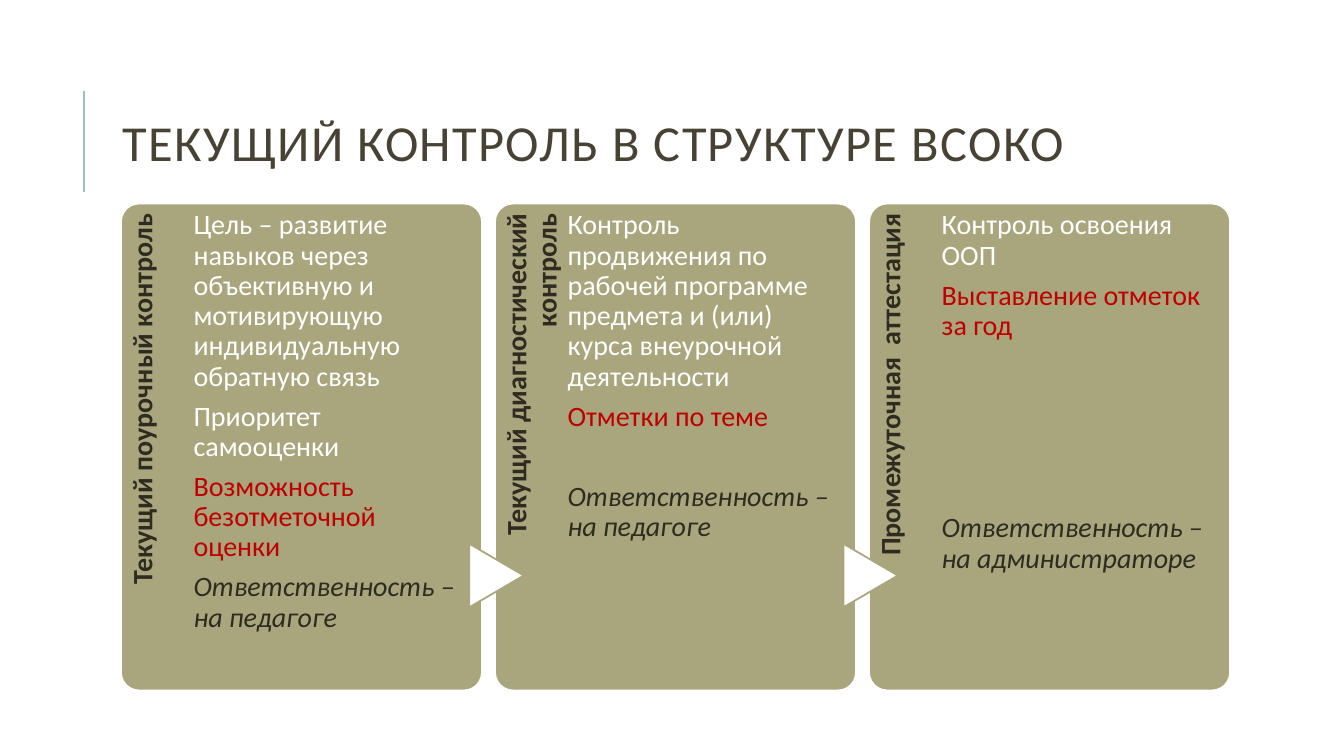
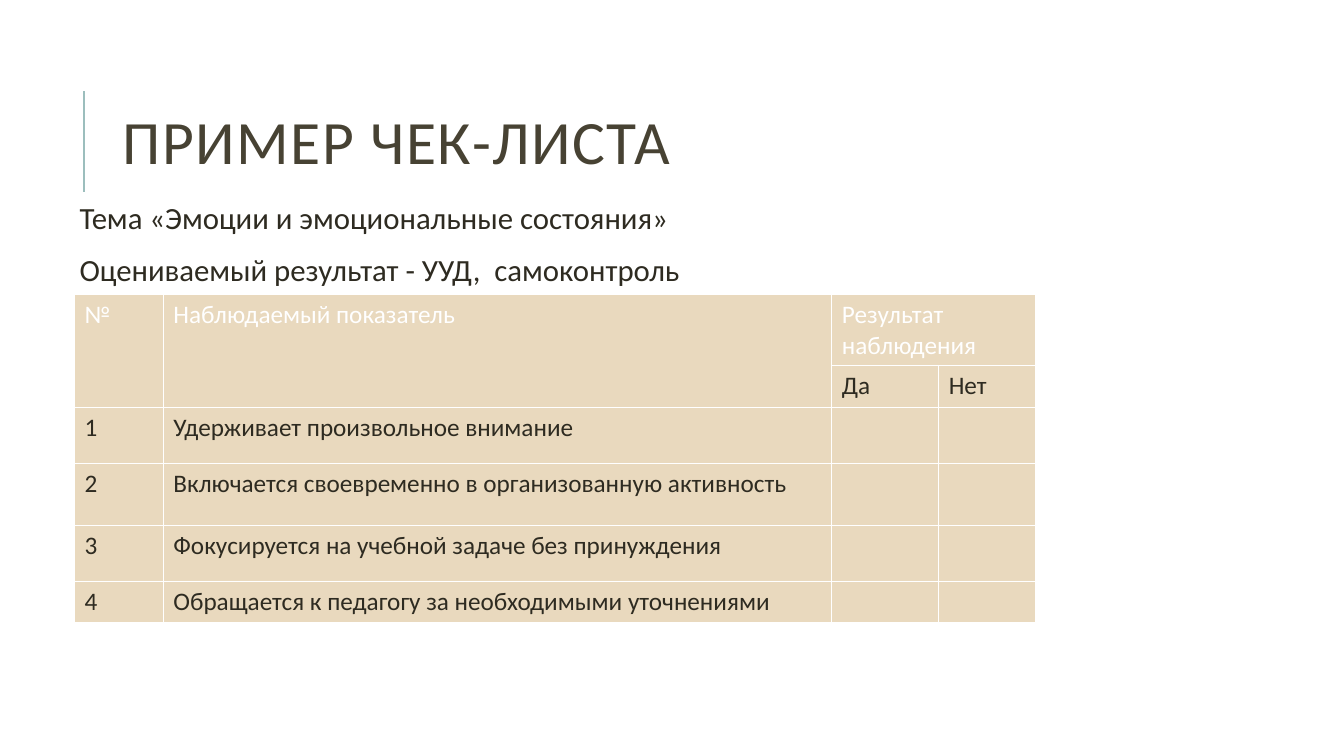
"""Build two slides on classroom assessment: a three-stage process and a checklist."""
from lxml import etree
from pptx import Presentation
from pptx.dml.color import RGBColor
from pptx.enum.shapes import MSO_CONNECTOR, MSO_SHAPE
from pptx.enum.text import MSO_ANCHOR, PP_ALIGN
from pptx.oxml.ns import qn
from pptx.util import Pt

PX = 9144
STRAIGHT = MSO_CONNECTOR.STRAIGHT
ROUNDED, TRIANGLE = MSO_SHAPE.ROUNDED_RECTANGLE, MSO_SHAPE.FLOWCHART_EXTRACT
LEFT, RIGHT = PP_ALIGN.LEFT, PP_ALIGN.RIGHT
TOP, MIDDLE = MSO_ANCHOR.TOP, MSO_ANCHOR.MIDDLE

THEME = {
    "font": "Calibri",
    "colors": {"title": "474233", "ink": "2E2B21", "white": "FFFFFF", "accent": "C00000",
               "card": "A9A57C", "rule": "9CBEBD", "cell": "E9D9BE"},
    "styles": {
        "process title": {"size": 36, "color": "title"},
        "checklist title": {"size": 44, "color": "title"},
        "stage": {"size": 20, "color": "ink", "bold": True},
        "goal": {"size": 20, "color": "white"},
        "mark": {"size": 20, "color": "accent"},
        "owner": {"size": 20, "color": "ink", "italic": True},
        "topic": {"size": 22, "color": "ink"},
        "head": {"size": 18, "color": "white"},
        "cell": {"size": 18, "color": "ink"},
    },
}
TITLE_FORMAT = {"line_spacing": 0.8}
CARD_FORMAT = {"line_spacing": 0.9, "space_after": Pt(7)}
TOPIC_FORMAT = {"line_spacing": 0.9, "space_before": Pt(12), "space_after": Pt(2)}
SKIPPED_LINE = 29

PROCESS_TITLE = "ТЕКУЩИЙ КОНТРОЛЬ В СТРУКТУРЕ ВСОКО"
STAGES = [
    {"name": "Текущий поурочный контроль", "skipped": 0, "points": [
        ("Цель – развитие навыков через объективную и мотивирующую "
         "индивидуальную обратную связь", "goal"),
        ("Приоритет самооценки", "goal"),
        ("Возможность безотметочной оценки", "mark"),
        ("Ответственность – на педагоге", "owner")]},
    {"name": "Текущий диагностический контроль", "skipped": 1, "points": [
        ("Контроль продвижения по рабочей программе предмета и (или) "
         "курса внеурочной деятельности", "goal"),
        ("Отметки по теме", "mark"),
        ("Ответственность – на педагоге", "owner")]},
    {"name": "Промежуточная  аттестация", "skipped": 4, "points": [
        ("Контроль освоения ООП", "goal"),
        ("Выставление отметок за год", "mark"),
        ("Ответственность – на администраторе", "owner")]},
]
CARD_LEFT, CARD_TOP, CARD_W, CARD_H, CARD_PITCH = 120, 202, 358, 483, 371
STAGE_W, STAGE_H = 396, 72
POINTS_W = 267
ARROW_W, ARROW_H, ARROW_TOP, ARROW_OVERLAP = 63, 54, 544, 30

CHECKLIST_TITLE = "ПРИМЕР ЧЕК-ЛИСТА"
TOPICS = [("Тема «Эмоции и эмоциональные состояния»", "topic"),
          ("Оцениваемый результат - УУД,  самоконтроль", "topic")]
HEADER = ["№", "Наблюдаемый показатель", "Результат наблюдения", ""]
ANSWERS = ["", "", "Да", "Нет"]
INDICATORS = ["Удерживает произвольное внимание",
              "Включается своевременно в организованную активность",
              "Фокусируется на учебной задаче без принуждения",
              "Обращается к педагогу за необходимыми уточнениями"]
MERGES = [((0, 0), (1, 0)), ((0, 1), (1, 1)), ((0, 2), (0, 3))]
COLUMN_WIDTHS = [88, 663, 106, 96]
ROW_HEIGHTS = [71, 41, 56, 61, 56, 41]


def px(*values):
    return [v * PX for v in values]


def color(name):
    return RGBColor.from_string(THEME["colors"][name])


def add_run(p, text, style):
    r = p.add_run()
    r.text = text
    look = THEME["styles"][style]
    values = {"name": THEME["font"], "size": Pt(look["size"]),
              "bold": look.get("bold", False), "italic": look.get("italic", False)}
    for key, value in values.items():
        setattr(r.font, key, value)
    r.font.color.rgb = color(look["color"])
    return r


def add_text(s, box, lines, paragraph_format, insets=(10, 5, 10, 5), align=LEFT, anchor=TOP):
    sp = s.shapes.add_textbox(*px(*box))
    tf = sp.text_frame
    left, top, right, bottom = px(*insets)
    frame = {"word_wrap": True, "vertical_anchor": anchor, "margin_left": left,
             "margin_top": top, "margin_right": right, "margin_bottom": bottom}
    for key, value in frame.items():
        setattr(tf, key, value)
    for i, (text, style) in enumerate(lines):
        p = tf.add_paragraph() if i else tf.paragraphs[0]
        for key, value in {"alignment": align, **paragraph_format}.items():
            setattr(p, key, value)
        add_run(p, text, style)
    return sp


def add_shape(s, kind, box, fill, line):
    sp = s.shapes.add_shape(kind, *px(*box))
    sp.shadow.inherit = False
    sp.fill.solid()
    sp.fill.fore_color.rgb = color(fill)
    sp.line.color.rgb = color(line)
    sp.line.width = Pt(1.25)
    return sp


def add_titled_slide(prs, title, style):
    s = prs.slides.add_slide(prs.slide_layouts[6])
    rule = s.shapes.add_connector(STRAIGHT, *px(83, 190, 83, 90))
    rule.line.color.rgb = color("rule")
    rule.line.width = Pt(1.5)
    etree.SubElement(rule._element.spPr, qn("a:effectLst"))
    sp = add_text(s, (112, 64, 1063, 164), [(title, style)], TITLE_FORMAT, anchor=MIDDLE)
    sp.text_frame.paragraphs[0].runs[0]._r.get_or_add_rPr().set("spc", "100")
    return s


def add_stage(s, index, stage):
    left = CARD_LEFT + index * CARD_PITCH
    card = add_shape(s, ROUNDED, (left, CARD_TOP, CARD_W, CARD_H), "card", "white")
    card.adjustments[0] = 0.05
    shift = (STAGE_W - STAGE_H) // 2
    name = add_text(s, (left - shift, CARD_TOP + shift, STAGE_W, STAGE_H),
                    [(stage["name"], "stage")], CARD_FORMAT, (0, 7, 10, 0), RIGHT)
    name.rotation = 270
    if index:
        arrow = add_shape(s, TRIANGLE, (left - ARROW_OVERLAP, ARROW_TOP, ARROW_W, ARROW_H),
                          "white", "card")
        arrow.rotation = 90
    points = add_text(s, (left + STAGE_H, CARD_TOP, POINTS_W, CARD_H),
                      stage["points"], CARD_FORMAT, (0, 7, 0, 0))
    before_owner = points.text_frame.paragraphs[-2]
    before_owner.space_after = Pt(7 + stage["skipped"] * SKIPPED_LINE)


def format_cell(cell, text, style):
    tc_pr = cell._tc.get_or_add_tcPr()
    for side in ("lnL", "lnR", "lnT", "lnB"):
        ln = etree.SubElement(tc_pr, qn(f"a:{side}"), w=str(Pt(1)))
        fill = etree.SubElement(ln, qn("a:solidFill"))
        etree.SubElement(fill, qn("a:srgbClr"), val=THEME["colors"]["white"])
    cell.fill.solid()
    cell.fill.fore_color.rgb = color("cell")
    if text:
        add_run(cell.text_frame.paragraphs[0], text, style)


def add_checklist(s):
    rows = [HEADER, ANSWERS]
    rows += [[str(n), text, "", ""] for n, text in enumerate(INDICATORS, 1)]
    box = px(74, 292, sum(COLUMN_WIDTHS), sum(ROW_HEIGHTS))
    table = s.shapes.add_table(len(rows), len(COLUMN_WIDTHS), *box).table
    table.first_row = table.horz_banding = False
    for column, width in zip(table.columns, px(*COLUMN_WIDTHS)):
        column.width = width
    for row, height in zip(table.rows, px(*ROW_HEIGHTS)):
        row.height = height
    for i, row in enumerate(rows):
        for j, text in enumerate(row):
            format_cell(table.cell(i, j), text, "cell" if i else "head")
    for first, last in MERGES:
        table.cell(*first).merge(table.cell(*last))


def main():
    prs = Presentation()
    prs.slide_width, prs.slide_height = px(1333, 750)
    s = add_titled_slide(prs, PROCESS_TITLE, "process title")
    for index, stage in enumerate(STAGES):
        add_stage(s, index, stage)
    s = add_titled_slide(prs, CHECKLIST_TITLE, "checklist title")
    add_text(s, (74, 196, 1088, 447), TOPICS, TOPIC_FORMAT, (5, 5, 5, 5))
    add_checklist(s)
    prs.save("out.pptx")


if __name__ == "__main__":
    main()
